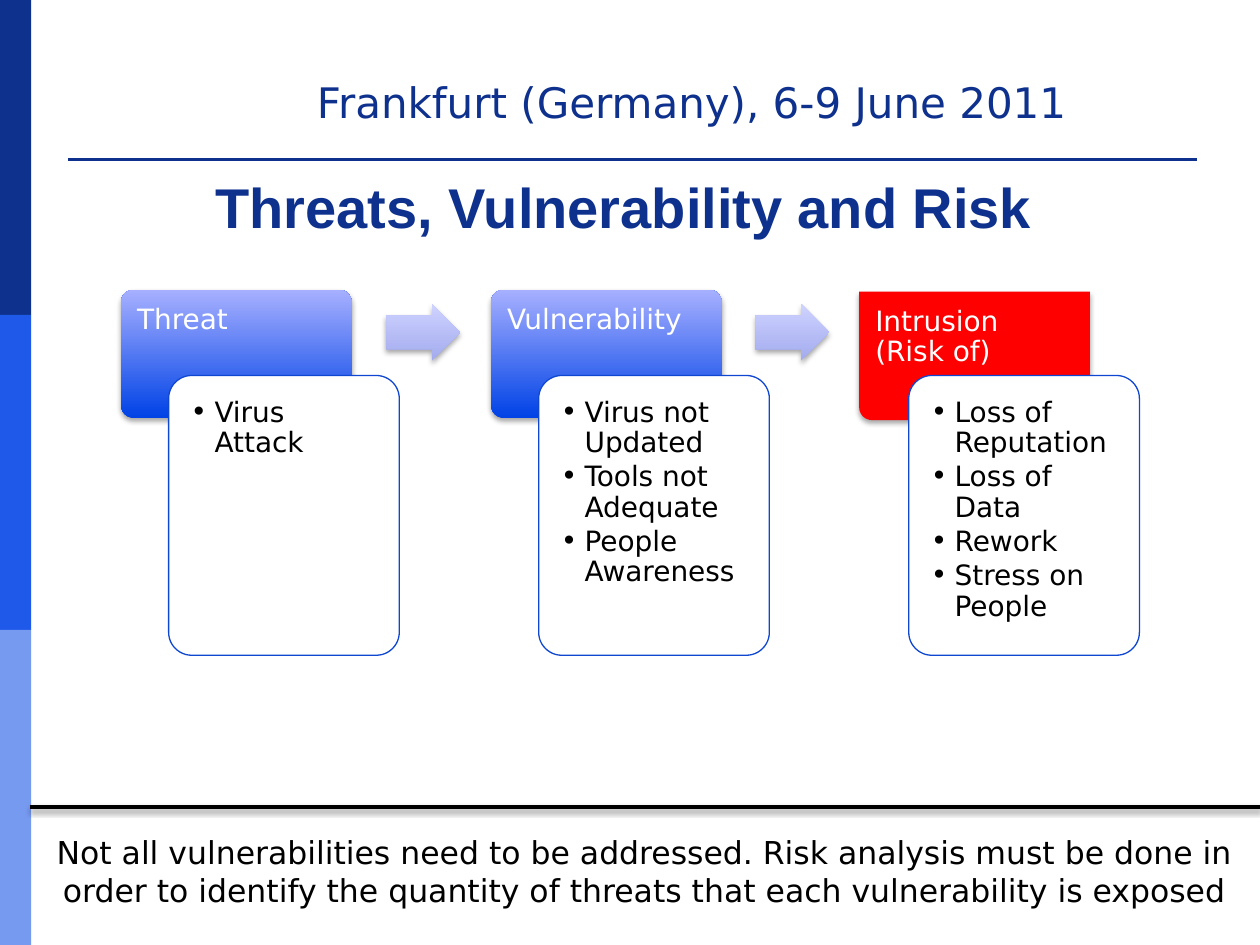
from lxml import etree
from pptx import Presentation
from pptx.dml.color import RGBColor
from pptx.enum.shapes import MSO_CONNECTOR, MSO_SHAPE
from pptx.enum.text import MSO_ANCHOR, MSO_AUTO_SIZE, PP_ALIGN
from pptx.oxml.ns import qn
from pptx.util import Cm, Pt

LEFT, CENTER = PP_ALIGN.LEFT, PP_ALIGN.CENTER
TOP, MIDDLE = MSO_ANCHOR.TOP, MSO_ANCHOR.MIDDLE
ROUND, ROUND_BOTTOM = MSO_SHAPE.ROUNDED_RECTANGLE, MSO_SHAPE.ROUND_2_SAME_RECTANGLE
RECT, ARROW = MSO_SHAPE.RECTANGLE, MSO_SHAPE.RIGHT_ARROW
STRAIGHT = MSO_CONNECTOR.STRAIGHT

NAVY, BLACK, WHITE = "0E318D", "000000", "FFFFFF"
BANDS = [NAVY, "1F59E9", "779AF1"]
BLUE_FADE = ["0042E6", "A7B0FF"]
ARROW_FADE = ["A3ABEE", "CED3FF"]
RED = ["FF0000"]
FONT = "DejaVu Sans"

EVENT = "Frankfurt (Germany), 6-9 June 2011"
TITLE = "Threats, Vulnerability and Risk"
NOTE = ("Not all vulnerabilities need to be addressed. Risk analysis must be done in "
        "order to identify the quantity of threats that each vulnerability is exposed")
STAGES = [
    dict(head="Threat", shape=ROUND, adj=[0.1], fill=BLUE_FADE, x=2.44, y=5.84, inset=0.25,
         items=["Virus Attack"]),
    dict(head="Vulnerability", shape=ROUND, adj=[0.1], fill=BLUE_FADE, x=9.9, y=5.84,
         inset=0.25, items=["Virus not Updated", "Tools not Adequate", "People Awareness"]),
    dict(head="Intrusion (Risk of)", shape=ROUND_BOTTOM, adj=[0, 0.1], fill=RED, x=17.32,
         y=5.88, inset=0.31,
         items=["Loss of Reputation", "Loss of Data", "Rework", "Stress on People"]),
]
BOX_W, HEAD_H = 4.65, 2.59
CARD_X, CARD_PITCH, CARD_Y, CARD_H = 3.4, 7.46, 7.57, 5.64
ARROW_X, ARROW_PITCH, ARROW_Y, ARROW_W, ARROW_H = 7.79, 7.44, 6.13, 1.49, 1.14


def rgb(value):
    return RGBColor.from_string(value)


def add_effects(sp, alpha=0, dist=1.8):
    effects = etree.SubElement(sp.element.spPr, qn("a:effectLst"))
    if alpha:
        shadow = etree.SubElement(effects, qn("a:outerShdw"), blurRad=str(Pt(3.1)),
                                  dist=str(Pt(dist)), dir="5400000", rotWithShape="0")
        color = etree.SubElement(shadow, qn("a:srgbClr"), val=BLACK)
        etree.SubElement(color, qn("a:alpha"), val=str(alpha * 1000))


def add_shape(kind, x, y, w, h, colors, adj=(), line=None, shadow=0):
    sp = s.shapes.add_shape(kind, Cm(x), Cm(y), Cm(w), Cm(h))
    for i, value in enumerate(adj):
        sp.adjustments[i] = value
    if len(colors) > 1:
        sp.fill.gradient()
        sp.fill.gradient_angle = 90
        for stop, color in zip(sp.fill.gradient_stops, colors):
            stop.color.rgb = rgb(color)
    else:
        sp.fill.solid()
        sp.fill.fore_color.rgb = rgb(colors[0])
    if line:
        sp.line.color.rgb = rgb(line)
        sp.line.width = Pt(0.75)
    else:
        sp.line.fill.background()
    add_effects(sp, shadow)
    return sp


def add_rule_table(x, y, w, h, color, width):
    table = s.shapes.add_table(1, 1, Cm(x), Cm(y), Cm(w), Cm(h)).table
    table.first_row = table.horz_banding = False
    cell = table.cell(0, 0)
    cell.margin_left = cell.margin_top = cell.margin_right = cell.margin_bottom = 0
    etree.SubElement(cell.text_frame.paragraphs[0]._p, qn("a:endParaRPr"), sz="800")
    tcPr = cell._tc.get_or_add_tcPr()
    for side in ("lnL", "lnR", "lnT"):
        etree.SubElement(etree.SubElement(tcPr, qn("a:" + side)), qn("a:noFill"))
    bottom = etree.SubElement(tcPr, qn("a:lnB"), w=str(Pt(width)))
    fill = etree.SubElement(bottom, qn("a:solidFill"))
    etree.SubElement(fill, qn("a:srgbClr"), val=color)
    cell.fill.background()


def add_bullet(p):
    pPr = p._p.get_or_add_pPr()
    pPr.set("marL", str(Cm(0.48)))
    pPr.set("indent", str(-Cm(0.48)))
    etree.SubElement(pPr, qn("a:buFont"), typeface=FONT)
    etree.SubElement(pPr, qn("a:buChar"), char="•")


def write(sp, *texts, size=16, color=BLACK, font=FONT, bold=False, align=LEFT,
          anchor=TOP, margins=(0.25, 0.13, 0.25, 0.13), spacing=None, after=0, bullet=False):
    tf = sp.text_frame
    tf.word_wrap = True
    tf.auto_size = MSO_AUTO_SIZE.NONE
    tf.vertical_anchor = anchor
    tf.margin_left, tf.margin_top, tf.margin_right, tf.margin_bottom = map(Cm, margins)
    for i, text in enumerate(texts):
        p = tf.add_paragraph() if i else tf.paragraphs[0]
        if bullet:
            add_bullet(p)
        p.alignment = align
        p.line_spacing = spacing
        p.space_after = Pt(after)
        r = p.add_run()
        r.text = text
        r.font.size, r.font.name, r.font.bold = Pt(size), font, bold
        r.font.color.rgb = rgb(color)


def add_text(x, y, w, h, text, **fmt):
    write(s.shapes.add_textbox(Cm(x), Cm(y), Cm(w), Cm(h)), text, **fmt)


prs = Presentation()
prs.slide_width, prs.slide_height = Cm(25.4), Cm(19.05)
s = prs.slides.add_slide(prs.slide_layouts[5])

for i, color in enumerate(BANDS):
    add_shape(RECT, 0, 6.35 * i, 0.63, 6.35, [color])
add_rule_table(1.37, 2.72, 22.77, 0.5, NAVY, 2.25)
add_text(6.14, 1.42, 16.71, 1.27, EVENT, size=24, color=NAVY)

title = s.shapes.title
title.left, title.top, title.width, title.height = Cm(1.15), Cm(3.33), Cm(22.86), Cm(1.65)
write(title, TITLE, size=32, color=NAVY, font="Arial", bold=True, align=CENTER, anchor=MIDDLE)

add_text(0.59, 16.46, 24.81, 2.18, NOTE, size=18, align=CENTER, anchor=MIDDLE)
divider = s.shapes.add_connector(STRAIGHT, Cm(0.6), Cm(16.27), Cm(25.4), Cm(16.27))
divider.line.color.rgb = rgb(BLACK)
divider.line.width = Pt(2)
add_effects(divider, 38, 1.6)

for i, stage in enumerate(STAGES):
    head = add_shape(stage["shape"], stage["x"], stage["y"], BOX_W, HEAD_H, stage["fill"],
                     adj=stage["adj"], shadow=35)
    write(head, stage["head"], color=WHITE, spacing=0.9,
          margins=(0.25, stage["inset"], 0.23, 0.18))
    card = add_shape(ROUND, CARD_X + CARD_PITCH * i, CARD_Y, BOX_W, CARD_H, [WHITE],
                     adj=[0.1], line="1047D1", shadow=0)
    write(card, *stage["items"], spacing=0.9, after=2.4, bullet=True,
          margins=(0.31, 0.32, 0.3, 0.3))
    if i < len(STAGES) - 1:
        add_shape(ARROW, ARROW_X + ARROW_PITCH * i, ARROW_Y, ARROW_W, ARROW_H, ARROW_FADE,
                  adj=[0.6, 0.5], shadow=35)

prs.save("out.pptx")
